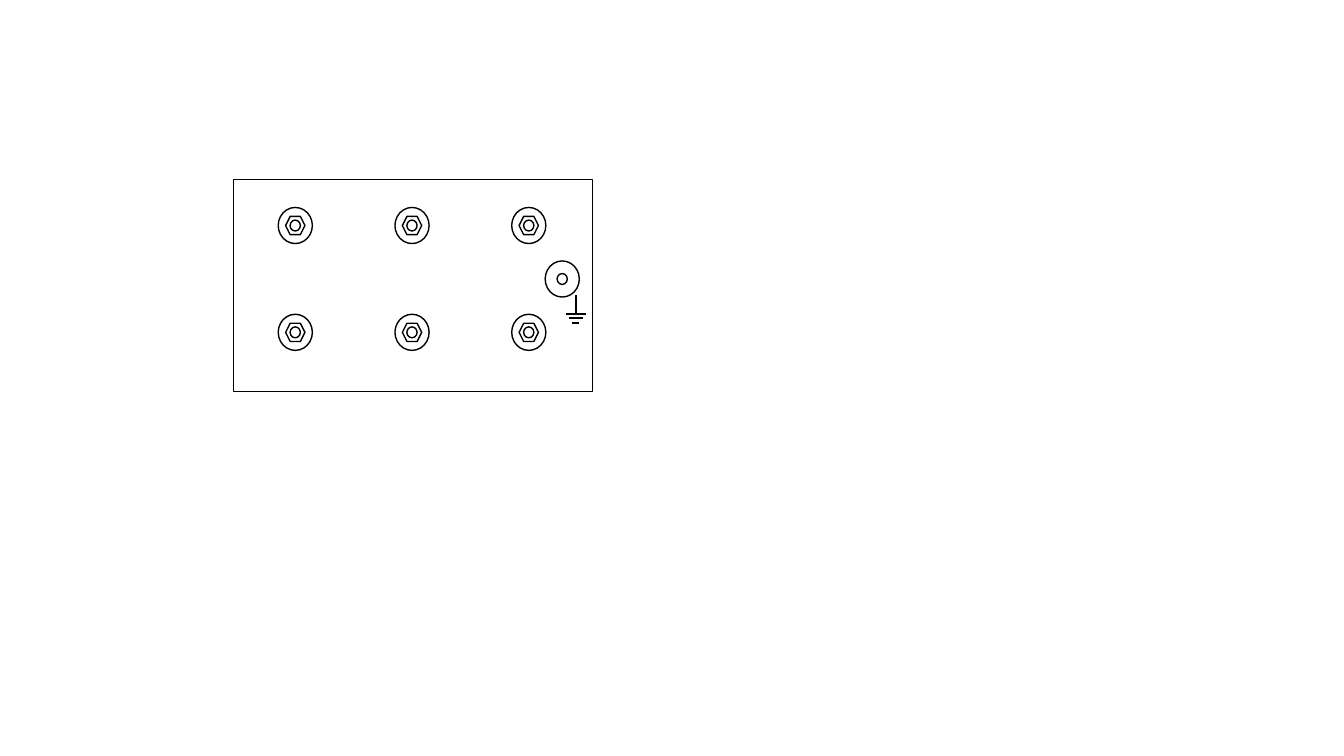
from itertools import product
from typing import NamedTuple

from lxml import etree
from pptx import Presentation
from pptx import util as u
from pptx.dml.color import RGBColor
from pptx.enum import shapes
from pptx.oxml.ns import qn
from pptx.shapes.shapetree import GroupShapes

BLACK, WHITE = "000000", "FFFFFF"


class Part(NamedTuple):
    """A preset outline and its size in points."""
    preset: shapes.MSO_SHAPE
    width: float
    height: float


class Bar(NamedTuple):
    """A straight line between two points."""
    x1: float
    y1: float
    x2: float
    y2: float


PANEL = Part(shapes.MSO_SHAPE.RECTANGLE, 256.3, 151.2)
WASHER = Part(shapes.MSO_SHAPE.OVAL, 24.4, 25.8)
NUT = Part(shapes.MSO_SHAPE.HEXAGON, 13.8, 13)
BORE = Part(shapes.MSO_SHAPE.OVAL, 7.3, 7.8)


def color(hex_code: str) -> RGBColor:
    return RGBColor.from_string(hex_code)


def add_part(group: GroupShapes, part: Part, cx: float, cy: float) -> None:
    """Draw a part centred on a point."""
    outline = group.add_shape(
        part.preset, u.Pt(cx - part.width / 2), u.Pt(cy - part.height / 2),
        u.Pt(part.width), u.Pt(part.height))
    outline.shadow.inherit = False
    outline.fill.solid()
    outline.fill.fore_color.rgb = color(WHITE)
    outline.line.fill.solid()
    outline.line.fill.fore_color.rgb = color(BLACK)
    outline.line.width = u.Pt(1)


def add_bar(group: GroupShapes, bar: Bar) -> None:
    wire = group.add_connector(shapes.MSO_CONNECTOR.STRAIGHT, *map(u.Pt, bar))
    wire.line.fill.solid()
    wire.line.fill.fore_color.rgb = color(BLACK)
    wire.line.width = u.Pt(1.5)
    etree.SubElement(wire._element.spPr, qn("a:effectLst"))


def main() -> None:
    deck = Presentation()
    page = {"slide_width": u.Pt(960), "slide_height": u.Pt(540)}
    for name, length in page.items():
        setattr(deck, name, length)
    slide = deck.slides.add_slide(deck.slide_layouts[6])
    plate = slide.shapes.add_group_shape().shapes

    # Panel
    add_part(plate, PANEL, 295.1, 203.9)

    # Terminals: three columns, two rows
    columns = [210.9 + 83.4 * i for i in range(3)]
    rows = [161.1, 237.4]
    for (cx, cy), part in product(product(columns, rows), (WASHER, NUT, BORE)):
        add_part(plate, part, cx, cy)

    # Ground terminal
    for part in (WASHER, BORE):
        add_part(plate, part, 401.6, 199.3)

    # Ground symbol: stem and three shrinking bars
    stem_x, top = 411.3, 224.1
    add_bar(plate, Bar(stem_x, 211, stem_x, top))
    for i, half in enumerate((7, 4.9, 2.6)):
        y = top + 3.2 * i
        add_bar(plate, Bar(stem_x + half, y, stem_x - half, y))

    deck.save("out.pptx")


if __name__ == "__main__":
    main()
